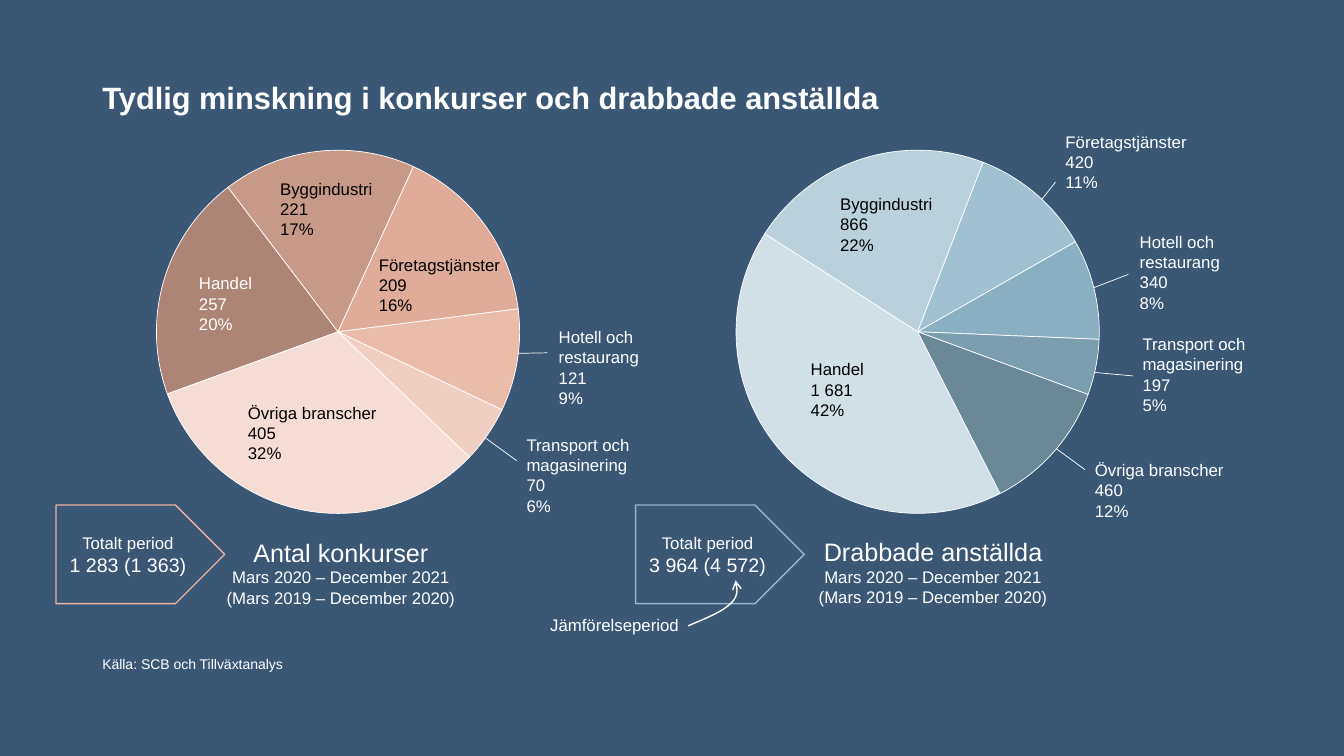
from lxml import etree
from pptx import Presentation
from pptx.chart.data import CategoryChartData
from pptx.dml.color import RGBColor
from pptx.enum import chart as charts, shapes, text
from pptx.oxml import ns, parse_xml
from pptx.util import Pt

COLORS = {
    "background": "3B5776",
    "white": "FFFFFF",
    "black": "000000",
    "copper": "EAB39E",
    "ice": "8FB8CA",
}
FONT = "Arial"
PIE_LEFT, PIE_TOP = 60, 35.3
PIE_WIDTH, PIE_HEIGHT = 283, 259.5
CHART_WIDTH, CHART_HEIGHT = 465, 320.4
LABEL_WIDTH = 115

BANKRUPTCIES = {
    "values": (20, 17, 16, 9, 5, 32),
    "slices": ("AD8475", "C89987", "E0AB97", "ECBCAB", "F1CEC2", "F5DDD6"),
    "angle": 250,
    "chart_at": (18.5, 5.8),
    "leaders": [(329, 257, 285, 225), (351, 180, 298, 181)],
    "labels": [
        ("Företagstjänster", "209", "16%", 223.5, 106.5, "black"),
        ("Byggindustri", "221", "17%", 153, 52, "black"),
        ("Hotell och restaurang", "121", "9%", 352, 158, "white"),
        ("Transport och\vmagasinering", "70", "6%", 329, 235, "white"),
        ("Övriga branscher", "405", "32%", 130, 212, "black"),
        ("Handel", "257", "20%", 95, 119.5, "white"),
    ],
    "caption": "Antal konkurser",
    "caption_at": (81, 308),
    "total": "1 283 (1 363)",
    "outline": "copper",
}
EMPLOYEES = {
    "values": (42, 22, 11, 9, 5, 12),
    "slices": ("D1DFE6", "BAD1DC", "9FC1D0", "89B0C1", "7A9EAD", "6A8895"),
    "angle": 153,
    "chart_at": (39, 8.6),
    "leaders": [(321, 263.5, 278, 232), (355, 196.5, 300, 191.5),
                (300, 144, 352, 124), (300, 58, 262, 106)],
    "labels": [
        ("Byggindustri", "866", "22%", 139, 63, "black"),
        ("Handel", "1 681", "42%", 118, 181, "black"),
        ("Övriga branscher", "460", "12%", 321, 253, "white"),
        ("Transport och\vmagasinering", "197", "5%", 355, 163, "white"),
        ("Hotell och restaurang", "340", "8%", 353, 90, "white"),
        ("Företagstjänster", "420", "11%", 300, 18.5, "white"),
    ],
    "caption": "Drabbade anställda",
    "caption_at": (90, 307.5),
    "total": "3 964 (4 572)",
    "outline": "ice",
}


def rgb(name):
    return RGBColor.from_string(COLORS.get(name, name))


def style_font(font, size, color):
    font.name = FONT
    font.size = Pt(size)
    font.color.rgb = rgb(color)


def style_line(line, color, width):
    line.color.rgb = rgb(color)
    line.width = Pt(width)


def fill_text(frame, lines, color="white", align=text.PP_ALIGN.LEFT):
    frame.word_wrap = True
    for index, (content, size) in enumerate(lines):
        paragraph = frame.paragraphs[0] if index == 0 else frame.add_paragraph()
        paragraph.text = content
        paragraph.alignment = align
        style_font(paragraph.font, size, color)


def add_text(slide, left, top, width, height, lines, **options):
    box = slide.shapes.add_textbox(Pt(left), Pt(top), Pt(width), Pt(height))
    fill_text(box.text_frame, lines, **options)
    box.text_frame.auto_size = text.MSO_AUTO_SIZE.SHAPE_TO_FIT_TEXT
    return box


def add_leader(slide, start_x, start_y, end_x, end_y):
    leader = slide.shapes.add_connector(
        shapes.MSO_CONNECTOR.STRAIGHT, Pt(start_x), Pt(start_y), Pt(end_x), Pt(end_y))
    style_line(leader.line, "white", 0.5)
    etree.SubElement(leader._element.spPr, ns.qn("a:effectLst"))


def add_pie(slide, left, top, panel):
    offset_x, offset_y = panel["chart_at"]
    data = CategoryChartData()
    data.categories = [str(number + 1) for number in range(len(panel["values"]))]
    data.add_series("Series 1", panel["values"])
    chart = slide.shapes.add_chart(
        charts.XL_CHART_TYPE.PIE, Pt(left + offset_x), Pt(top + offset_y),
        Pt(CHART_WIDTH), Pt(CHART_HEIGHT), data).chart
    chart.has_title = False
    chart.has_legend = False
    style_font(chart.font, 12, "black")
    plot = chart.plots[0]
    plot.vary_by_categories = True
    for index, color in enumerate(panel["slices"]):
        slice_format = plot.series[0].points[index].format
        slice_format.fill.solid()
        slice_format.fill.fore_color.rgb = rgb(color)
        style_line(slice_format.line, "white", 0.5)

    pie = chart._chartSpace.find(".//" + ns.qn("c:pieChart"))
    angle = pie.find(ns.qn("c:firstSliceAng"))
    if angle is None:
        angle = etree.SubElement(pie, ns.qn("c:firstSliceAng"))
    angle.set("val", str(panel["angle"]))

    area = pie.getparent()
    for layout in area.findall(ns.qn("c:layout")):
        area.remove(layout)
    position = {
        "x": (PIE_LEFT - offset_x) / CHART_WIDTH,
        "y": (PIE_TOP - offset_y) / CHART_HEIGHT,
        "w": PIE_WIDTH / CHART_WIDTH,
        "h": PIE_HEIGHT / CHART_HEIGHT,
    }
    parts = "".join(f'<c:{key} val="{value:.4f}"/>' for key, value in position.items())
    area.insert(0, parse_xml(
        f'<c:layout {ns.nsdecls("c")}><c:manualLayout><c:layoutTarget val="inner"/>'
        f'<c:xMode val="edge"/><c:yMode val="edge"/>{parts}</c:manualLayout></c:layout>'))


def add_panel(slide, left, top, panel):
    for start_x, start_y, end_x, end_y in panel["leaders"]:
        add_leader(slide, left + start_x, top + start_y, left + end_x, top + end_y)
    add_pie(slide, left, top, panel)
    for name, value, share, x, y, color in panel["labels"]:
        add_text(slide, left + x, top + y, LABEL_WIDTH, 51,
                 [(name, 12), (value, 12), (share, 12)], color=color)

    x, y = panel["caption_at"]
    add_text(slide, left + x, top + y, 245, 58,
             [(panel["caption"], 18), ("Mars 2020 – December 2021", 12),
              ("(Mars 2019 – December 2020)", 12)], align=text.PP_ALIGN.CENTER)

    total = slide.shapes.add_shape(
        shapes.MSO_SHAPE.PENTAGON, Pt(left), Pt(top + 288.7), Pt(120.5), Pt(70.5))
    total.shadow.inherit = False
    total.fill.background()
    style_line(total.line, panel["outline"], 1)
    total.text_frame.vertical_anchor = text.MSO_ANCHOR.MIDDLE
    fill_text(total.text_frame, [("Totalt period", 12), (panel["total"], 14)],
              align=text.PP_ALIGN.CENTER)


def curve_points(start, first, second, end, steps=12):
    for step in range(1, steps + 1):
        t = step / steps
        weights = ((1 - t) ** 3, 3 * t * (1 - t) ** 2, 3 * t * t * (1 - t), t ** 3)
        yield tuple(sum(weight * point[axis] for weight, point in
                        zip(weights, (start, first, second, end))) for axis in (0, 1))


def add_comparison_note(slide, left, top):
    add_text(slide, left, top, LABEL_WIDTH, 22, [("Jämförelseperiod", 12)],
             align=text.PP_ALIGN.CENTER)
    offsets = [(110, 11.5), (122, 6.5), (134.5, 1.5), (140.5, -4.5),
               (146, -9.5), (145.5, -15), (144, -21)]
    knots = [(left + x, top + y) for x, y in offsets]
    points = [*curve_points(*knots[:4]), *curve_points(*knots[3:])]
    builder = slide.shapes.build_freeform(Pt(knots[0][0]), Pt(knots[0][1]))
    builder.add_line_segments([(Pt(x), Pt(y)) for x, y in points], close=False)
    arrow = builder.convert_to_shape()
    arrow.shadow.inherit = False
    arrow.fill.background()
    style_line(arrow.line, "white", 1)
    etree.SubElement(arrow.line._get_or_add_ln(), ns.qn("a:tailEnd"), type="arrow")


def add_heading(slide, left, top, width, height):
    title = slide.shapes.title
    title.left, title.top, title.width, title.height = map(Pt, (left, top, width, height))
    frame = title.text_frame
    fill_text(frame, [("Tydlig minskning i konkurser och drabbade anställda", 22)])
    frame.auto_size = text.MSO_AUTO_SIZE.NONE
    frame.vertical_anchor = text.MSO_ANCHOR.BOTTOM
    frame.paragraphs[0].line_spacing = Pt(31)
    frame.paragraphs[0].font.bold = True


def main():
    presentation = Presentation()
    presentation.slide_width, presentation.slide_height = Pt(960), Pt(540)
    slide = presentation.slides.add_slide(presentation.slide_layouts[5])
    slide.background.fill.solid()
    slide.background.fill.fore_color.rgb = rgb("background")
    add_heading(slide, 66, 29, 828, 57.5)
    add_panel(slide, 40, 72, BANKRUPTCIES)
    add_panel(slide, 454, 72, EMPLOYEES)
    add_comparison_note(slide, 381.5, 435.5)
    source = add_text(slide, 66, 464.5, 210, 19.5, [("Källa: SCB och Tillväxtanalys", 10)])
    source.text_frame.vertical_anchor = text.MSO_ANCHOR.BOTTOM
    presentation.save("out.pptx")


if __name__ == "__main__":
    main()
